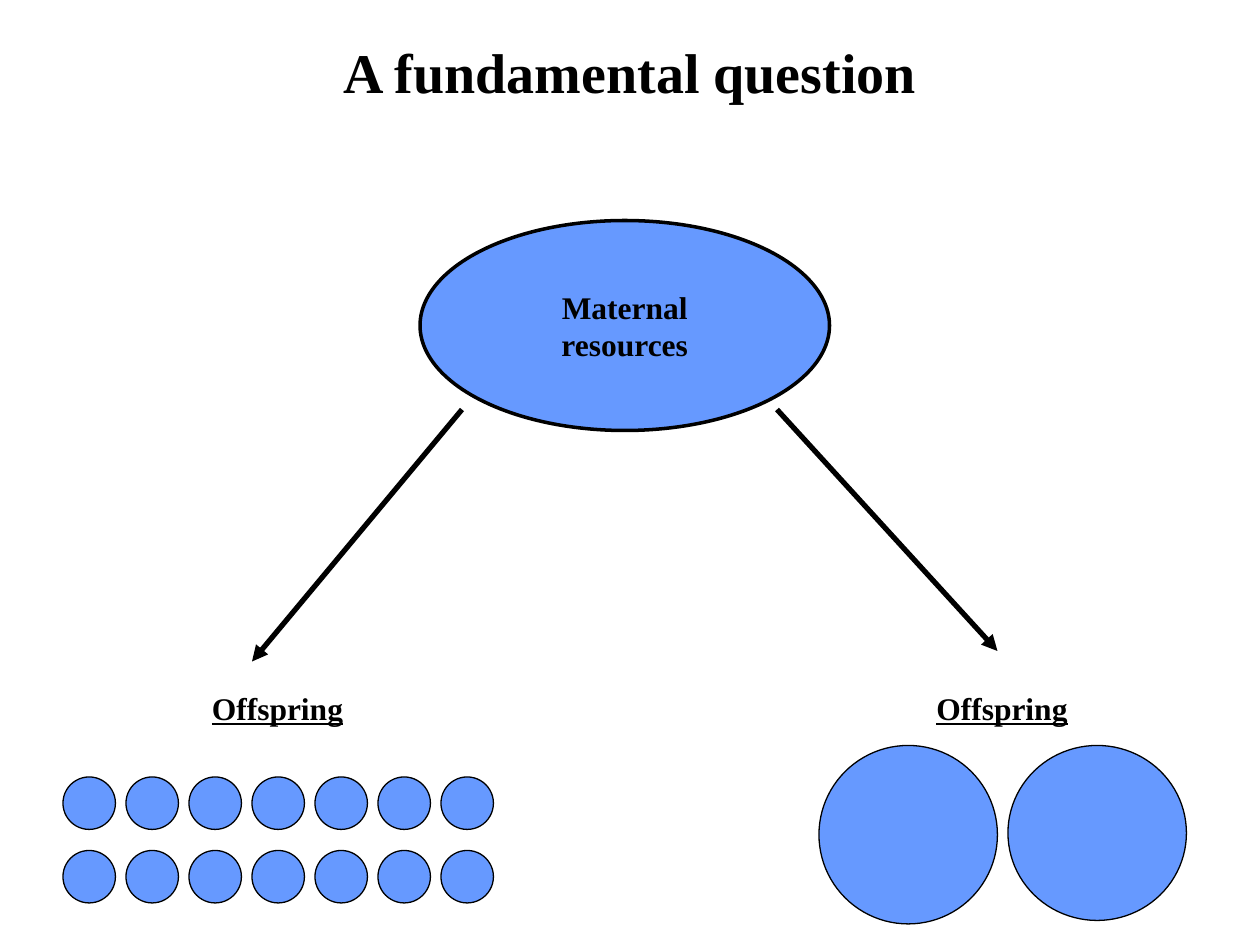
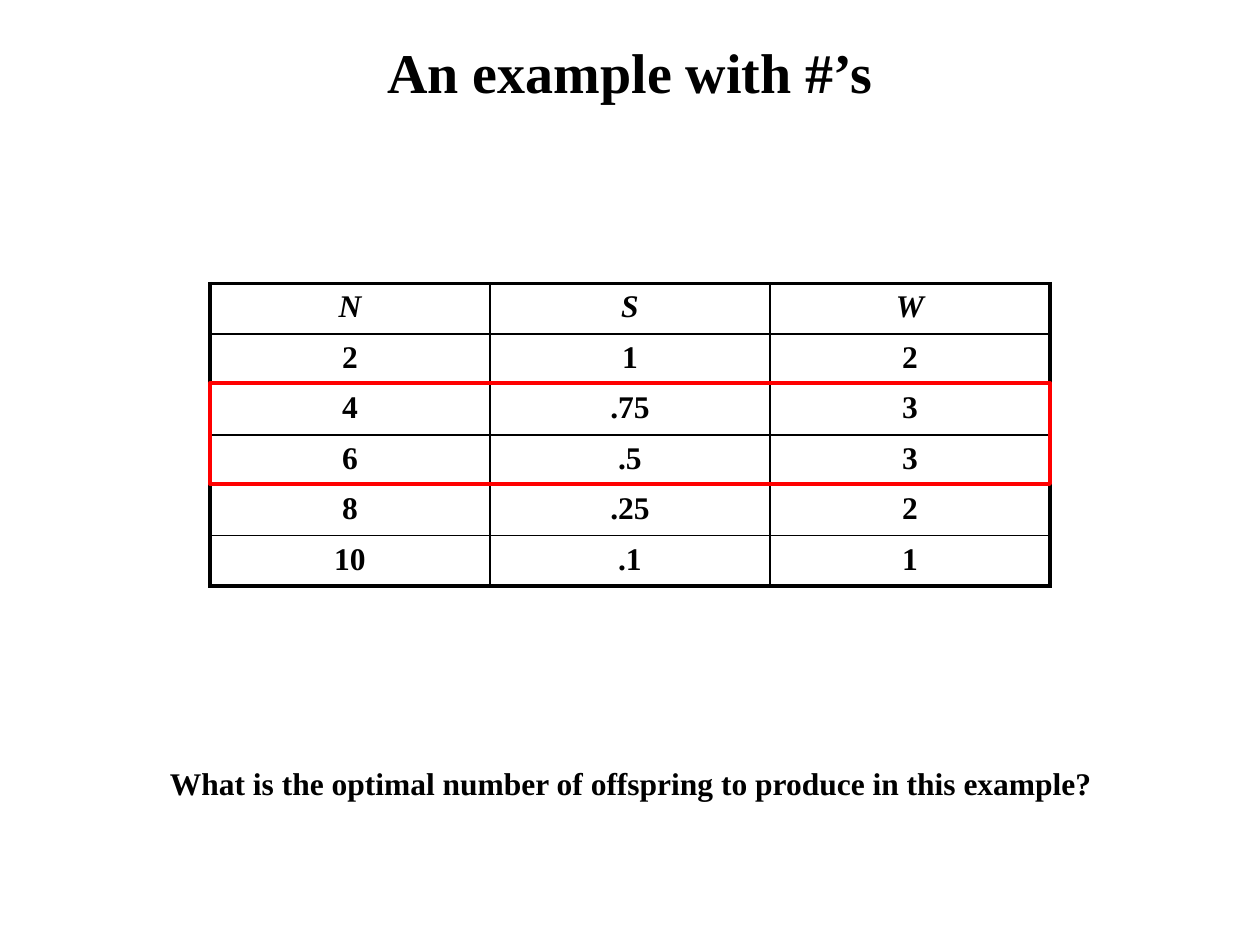
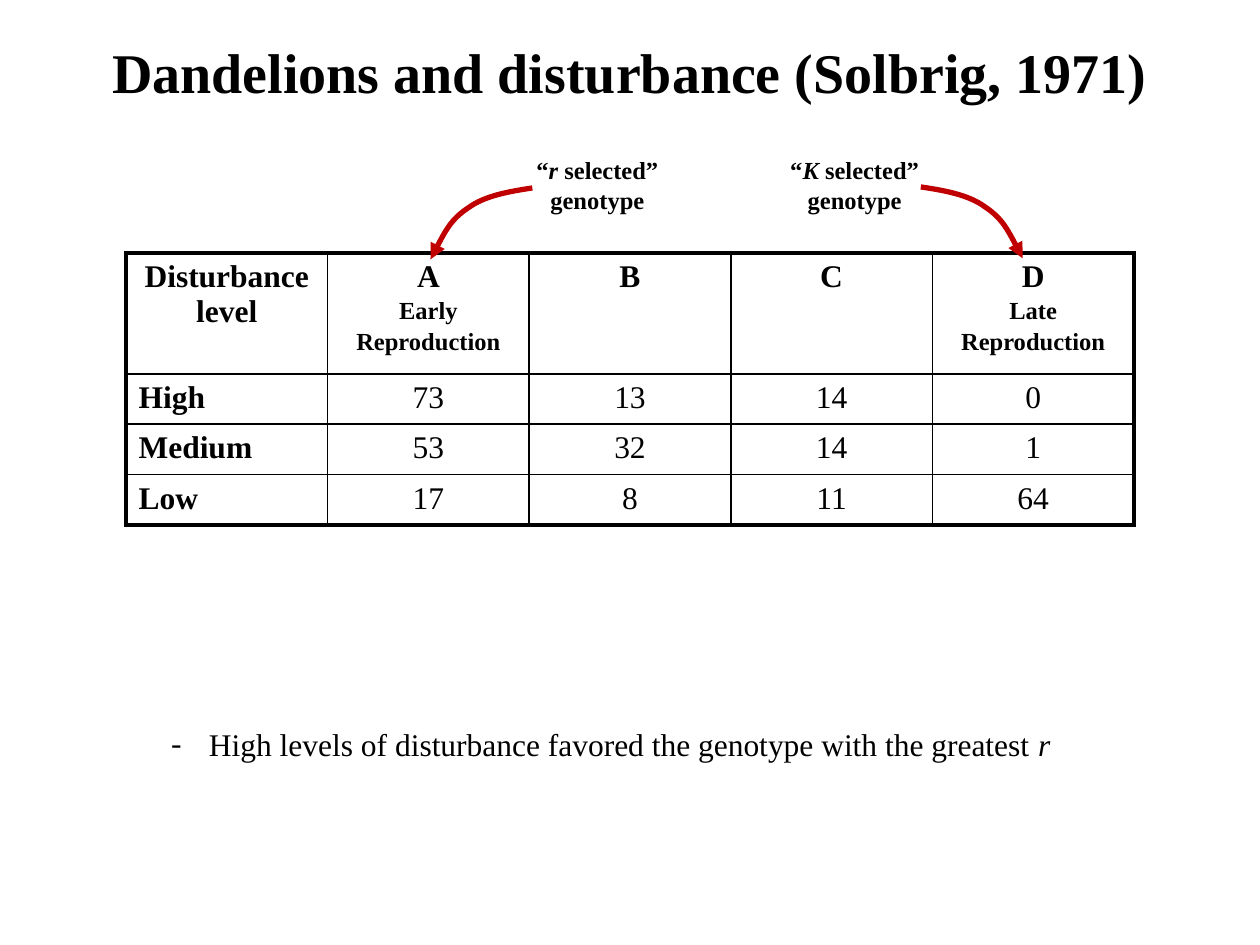
from dataclasses import dataclass

from lxml import etree
from pptx import Presentation
from pptx.dml.color import RGBColor
from pptx.enum.shapes import MSO_CONNECTOR, MSO_SHAPE
from pptx.enum.text import MSO_ANCHOR, PP_ALIGN
from pptx.oxml.ns import qn
from pptx.util import Inches, Pt

BLACK = RGBColor(0x00, 0x00, 0x00)
BLUE = RGBColor(0x66, 0x99, 0xFF)
RED = RGBColor(0xFF, 0x00, 0x00)
DARK_RED = RGBColor(0xC0, 0x00, 0x00)
FONT = "Times New Roman"
TITLE_SIZE, BODY_SIZE, SMALL_SIZE = 32, 18, 14
OUTER_LINE, INNER_LINE = 2.25, 1
LEFT, CENTER = PP_ALIGN.LEFT, PP_ALIGN.CENTER
MIDDLE = MSO_ANCHOR.MIDDLE
OVAL, RECTANGLE = MSO_SHAPE.OVAL, MSO_SHAPE.RECTANGLE
STRAIGHT = MSO_CONNECTOR.STRAIGHT

SLIDE_WIDTH, SLIDE_HEIGHT = Inches(10), Inches(7.5)
GRID_COLUMNS, GRID_ROWS = 120, 90
UNIT = SLIDE_WIDTH // GRID_COLUMNS
ROW_HEIGHT = 4.8
CURVE = [(1, 0), (0.77, 0.05), (0.53, 0.11), (0.37, 0.28),
         (0.2, 0.44), (0.1, 0.72), (0, 1)]


@dataclass
class Box:
    """A rectangle in grid units."""
    left: float
    top: float
    width: float
    height: float

    def inner(self, left, top, width, height):
        """Return a box offset from this one's corner."""
        return Box(self.left + left, self.top + top, width, height)

    def point(self, across, down):
        """Return the slide position at shares of this box."""
        return (units(self.left + across * self.width),
                units(self.top + down * self.height))

    def frame(self):
        """Return left, top, width and height as slide lengths."""
        return [units(side) for side in (self.left, self.top, self.width, self.height)]


@dataclass
class Span:
    """A run of text and its style."""
    text: str
    size: int = BODY_SIZE
    bold: bool = True
    italic: bool = False
    underline: bool = False


PAGE = Box(0, 0, GRID_COLUMNS, GRID_ROWS)


def units(count):
    """Convert grid units to a slide length."""
    return round(count * UNIT)


def write(text_frame, paras, align=LEFT, gap=0):
    """Fill a text frame with paragraphs of spans."""
    for index, spans in enumerate(paras):
        para = text_frame.add_paragraph() if index else text_frame.paragraphs[0]
        para.alignment = align
        if index and gap:
            para.space_before = Pt(gap)
        for span in spans:
            run = para.add_run()
            run.text = span.text
            run.font.name = FONT
            run.font.size = Pt(span.size)
            run.font.bold = span.bold
            run.font.italic = span.italic
            run.font.underline = span.underline
            run.font.color.rgb = BLACK


def add_text(page, box, paras, align=LEFT, wrap=False):
    """Add a text box and return its text frame."""
    text_frame = page.shapes.add_textbox(*box.frame()).text_frame
    text_frame.word_wrap = wrap
    write(text_frame, paras, align)
    return text_frame


def add_figure(page, kind, box, fill=None, line=BLACK, weight=0.75):
    """Add a flat preset shape."""
    figure = page.shapes.add_shape(kind, *box.frame())
    figure.shadow.inherit = False
    if fill is None:
        figure.fill.background()
    else:
        figure.fill.solid()
        figure.fill.fore_color.rgb = fill
    figure.line.color.rgb = line
    figure.line.width = Pt(weight)
    return figure


def style_arrow(arrow, color):
    """Give a line its colour, weight and triangular tip."""
    arrow.line.color.rgb = color
    arrow.line.width = Pt(3)
    outline = arrow.element.spPr.find(qn("a:ln"))
    etree.SubElement(outline, qn("a:tailEnd"), type="triangle")


def add_arrow(page, start, end):
    """Add a straight black arrow between two grid points."""
    ends = [units(value) for value in (*start, *end)]
    arrow = page.shapes.add_connector(STRAIGHT, *ends)
    style_arrow(arrow, BLACK)
    etree.SubElement(arrow.element.spPr, qn("a:effectLst"))


def add_curved_arrow(page, box, mirrored=False):
    """Add a red arrow that bends down along two Bézier curves."""
    points = [box.point(1 - across if mirrored else across, down) for across, down in CURVE]
    builder = page.shapes.build_freeform(*points[0])
    builder.add_line_segments(points[1:], close=False)
    arrow = builder.convert_to_shape()
    arrow.shadow.inherit = False
    arrow.fill.background()
    style_arrow(arrow, DARK_RED)
    outline = next(arrow.element.iter(qn("a:path")[:-4] + "path"))
    segments = outline.findall(qn("a:lnTo"))
    for first in range(0, len(segments), 3):
        curve = etree.SubElement(outline, qn("a:cubicBezTo"))
        for segment in segments[first:first + 3]:
            curve.append(segment[0])
            outline.remove(segment)


def add_border(cell, side, weight):
    """Draw one black side of a table cell."""
    border = etree.SubElement(cell._tc.get_or_add_tcPr(), qn(f"a:ln{side}"), w=str(Pt(weight)))
    fill = etree.SubElement(border, qn("a:solidFill"))
    etree.SubElement(fill, qn("a:srgbClr"), val=str(BLACK))


def add_grid(page, box, rows, header_height=ROW_HEIGHT, left_labels=False):
    """Add a ruled table whose outer border is heavier."""
    last_row, last_column = len(rows) - 1, len(rows[0]) - 1
    table = page.shapes.add_table(len(rows), len(rows[0]), *box.frame()).table
    table.first_row = table.horz_banding = False
    for column in table.columns:
        column.width = units(box.width / len(rows[0]))
    for r, row in enumerate(rows):
        table.rows[r].height = units(ROW_HEIGHT if r else header_height)
        for c, paras in enumerate(row):
            cell = table.cell(r, c)
            outer = {"L": c == 0, "R": c == last_column, "T": r == 0, "B": r == last_row}
            for side, heavy in outer.items():
                add_border(cell, side, OUTER_LINE if heavy else INNER_LINE)
            cell.fill.background()
            align = LEFT if left_labels and r and c == 0 else CENTER
            write(cell.text_frame, paras, align, gap=2.2)


def add_page(deck, title):
    """Add a blank slide with the shared title."""
    page = deck.slides.add_slide(deck.slide_layouts[6])
    add_text(page, PAGE.inner(0, 3, GRID_COLUMNS, 7.5), [[Span(title, TITLE_SIZE)]], CENTER, wrap=True)
    return page


def add_offspring_label(page, box):
    """Head a group of offspring."""
    add_text(page, box, [[Span("Offspring", underline=True)]])


def add_small_offspring(page, box):
    """Place two rows of seven small circles under their heading."""
    add_offspring_label(page, box.inner(13, 0, 14.9, ROW_HEIGHT))
    for row in range(2):
        for column in range(7):
            add_figure(page, OVAL, box.inner(6 * column, 9 + 7 * row, 5, 5), BLUE)


def add_large_offspring(page, box):
    """Place two large circles under their heading."""
    for column, height in enumerate((17, 16.67)):
        add_figure(page, OVAL, box.inner(18 * column, 6, 17, height), BLUE)
    add_offspring_label(page, box.inner(10, 0, 14.9, ROW_HEIGHT))


def build_question(deck):
    """Show how maternal resources divide among offspring."""
    page = add_page(deck, "A fundamental question")
    mother = add_figure(page, OVAL, PAGE.inner(40, 21, 39, 20), BLUE, weight=2)
    mother.text_frame.word_wrap = False
    mother.text_frame.vertical_anchor = MIDDLE
    write(mother.text_frame, [[Span("Maternal")], [Span("resources")]], CENTER)
    add_arrow(page, (44, 39), (24, 63))
    add_arrow(page, (74, 39), (95, 62))
    add_small_offspring(page, Box(6, 65, 41, 21))
    add_large_offspring(page, Box(78, 65, 35, 23))


def build_example(deck):
    """Tabulate offspring number, survival and fitness."""
    page = add_page(deck, "An example with #’s")
    values = [("2", "1", "2"), ("4", ".75", "3"), ("6", ".5", "3"),
              ("8", ".25", "2"), ("10", ".1", "1")]
    rows = [[[[Span(name, italic=True)]] for name in "NSW"]]
    rows += [[[[Span(value)]] for value in row] for row in values]
    box = Box(20, 27, 80, ROW_HEIGHT * len(rows))
    add_grid(page, box, rows)
    add_text(page, PAGE.inner(15, 72.2, 90.4, ROW_HEIGHT),
             [[Span("What is the optimal number of offspring to produce in this example?")]])
    add_figure(page, RECTANGLE, box.inner(0, 9.5, box.width, 2 * ROW_HEIGHT), line=RED, weight=OUTER_LINE)


def add_genotype_label(page, box, letter):
    """Name the kind of selection behind a genotype."""
    first_line = [Span("“", SMALL_SIZE), Span(letter, SMALL_SIZE, italic=True),
                  Span(" selected”", SMALL_SIZE)]
    add_text(page, box, [first_line, [Span("genotype", SMALL_SIZE)]], CENTER)


def add_finding(page, box):
    """State the finding as a dashed point."""
    text_frame = add_text(page, box, [[
        Span("High levels of disturbance favored the genotype with the greatest ", bold=False),
        Span("r", bold=False, italic=True)]], wrap=True)
    properties = text_frame.paragraphs[0]._p.get_or_add_pPr()
    properties.set("marL", str(Inches(1.06)))
    properties.set("indent", str(Inches(-0.3)))
    etree.SubElement(properties, qn("a:buFont"), typeface=FONT)
    etree.SubElement(properties, qn("a:buChar"), char="-")


def build_dandelions(deck):
    """Tabulate dandelion genotypes by disturbance level."""
    page = add_page(deck, "Dandelions and disturbance (Solbrig, 1971)")
    notes = {"A": "Early", "D": "Late"}
    header = [[[Span("Disturbance level")]]]
    for genotype in "ABCD":
        paras = [[Span(genotype)]]
        if genotype in notes:
            paras += [[Span(word, SMALL_SIZE)] for word in (notes[genotype], "Reproduction")]
        header.append(paras)
    counts = {"High": (73, 13, 14, 0), "Medium": (53, 32, 14, 1), "Low": (17, 8, 11, 64)}
    rows = [header]
    for level, row in counts.items():
        rows.append([[[Span(level)]]] + [[[Span(str(count), bold=False)]] for count in row])
    add_grid(page, Box(12, 24.1, 96, 25.9), rows, header_height=11.5, left_labels=True)
    add_finding(page, Box(6, 68.5, 104, ROW_HEIGHT))
    add_curved_arrow(page, Box(41, 17.9, 9.7, 6.8))
    add_curved_arrow(page, Box(87.7, 17.8, 9.7, 6.8), mirrored=True)
    add_genotype_label(page, Box(49.8, 14.2, 14.2, 6.8), "r")
    add_genotype_label(page, Box(74, 14.2, 14.8, 6.8), "K")


def main():
    """Build and save the deck."""
    deck = Presentation()
    deck.slide_width, deck.slide_height = SLIDE_WIDTH, SLIDE_HEIGHT
    for build in (build_question, build_example, build_dandelions):
        build(deck)
    deck.save("out.pptx")


if __name__ == "__main__":
    main()
